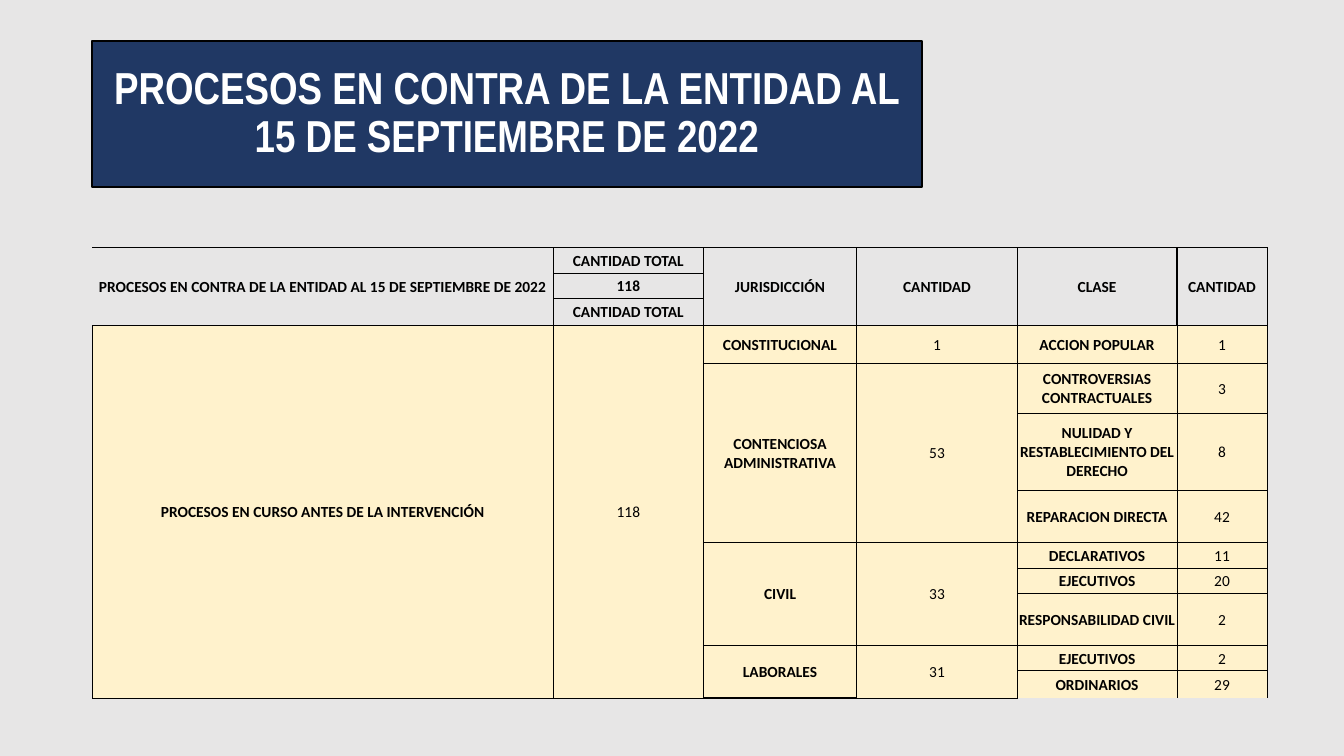
from dataclasses import dataclass

from lxml.etree import SubElement
from pptx import Presentation
from pptx.dml.color import RGBColor
from pptx.enum.shapes import MSO_SHAPE
from pptx.enum.text import MSO_ANCHOR, PP_ALIGN
from pptx.oxml import parse_xml
from pptx.oxml.ns import nsdecls, qn
from pptx.slide import Slide
from pptx.table import Table, _Cell
from pptx.text.text import TextFrame
from pptx.util import Emu, Pt

BACKGROUND = RGBColor(0xE7, 0xE6, 0xE6)
NAVY = RGBColor(0x20, 0x38, 0x64)
CREAM = RGBColor(0xFF, 0xF2, 0xCC)
BLACK = RGBColor(0, 0, 0)
WHITE = RGBColor(0xFF, 0xFF, 0xFF)

TITLE = "PROCESOS EN CONTRA DE LA ENTIDAD AL 15 DE SEPTIEMBRE DE 2022"
COLUMNS = (439, 143, 146, 153, 152, 86)
ROWS = (24, 24, 26, 36, 48, 73, 50, 24, 24, 50, 24, 26)
HEADER_ROWS = 3
SECTION_STARTS = (0, 3, 4, 7, 10)
HEADER_VERTICALS = (0, 0.5, 1, 1, 1, 1, 1)
BODY_VERTICALS = (0.5, 0.5, 1, 1, 0.5, 0.5, 1)
BOTTOM_EDGE = (0.5, 0.5, 1, 0.5, 0, 0)


@dataclass(frozen=True)
class Entry:
    """A table cell, which may span several rows."""
    row: int
    col: int
    text: str
    span: int = 1


@dataclass(frozen=True)
class Jurisdiction:
    """A jurisdiction with its total and its classes of process."""
    name: str
    total: int
    classes: tuple[tuple[str, int], ...]


JURISDICTIONS = (
    Jurisdiction("CONSTITUCIONAL", 1, (("ACCION POPULAR", 1),)),
    Jurisdiction("CONTENCIOSA ADMINISTRATIVA", 53, (
        ("CONTROVERSIAS CONTRACTUALES", 3),
        ("NULIDAD Y RESTABLECIMIENTO DEL DERECHO", 8),
        ("REPARACION DIRECTA", 42))),
    Jurisdiction("CIVIL", 33, (
        ("DECLARATIVOS", 11), ("EJECUTIVOS", 20), ("RESPONSABILIDAD CIVIL", 2))),
    Jurisdiction("LABORALES", 31, (("EJECUTIVOS", 2), ("ORDINARIOS", 29))),
)


def px(n: int) -> Emu:
    """Convert pixels to EMU."""
    return Emu(n * 9525)


def table_entries() -> list[Entry]:
    """List the header cells and the cells of every jurisdiction."""
    entries = [Entry(0, 0, TITLE, HEADER_ROWS)]
    for row, text in enumerate(("CANTIDAD TOTAL", "118", "CANTIDAD TOTAL")):
        entries.append(Entry(row, 1, text))
    for col, text in enumerate(("JURISDICCIÓN", "CANTIDAD", "CLASE", "CANTIDAD"), 2):
        entries.append(Entry(0, col, text, HEADER_ROWS))
    body_rows = len(ROWS) - HEADER_ROWS
    entries.append(Entry(HEADER_ROWS, 0, "PROCESOS EN CURSO ANTES DE LA INTERVENCIÓN", body_rows))
    entries.append(Entry(HEADER_ROWS, 1, "118", body_rows))
    row = HEADER_ROWS
    for j in JURISDICTIONS:
        entries.append(Entry(row, 2, j.name, len(j.classes)))
        entries.append(Entry(row, 3, str(j.total), len(j.classes)))
        for name, count in j.classes:
            entries.append(Entry(row, 4, name))
            entries.append(Entry(row, 5, str(count)))
            row += 1
    return entries


def horizontal_width(edge: int, col: int) -> float:
    """Return the width in points of a horizontal rule."""
    if edge == len(ROWS):
        return BOTTOM_EDGE[col]
    if edge == HEADER_ROWS and col < 2:
        return 0.5
    return 1 if edge in SECTION_STARTS else 0.5


def set_borders(cell: _Cell, widths: dict[str, float]) -> None:
    """Put the four borders before the fill of a cell."""
    tc_pr = cell._tc.get_or_add_tcPr()
    for i, (side, width) in enumerate(widths.items()):
        ln = parse_xml(f'<a:ln{side} {nsdecls("a")} w="{Pt(width)}"/>')
        if width:
            fill = SubElement(ln, qn("a:solidFill"))
            SubElement(fill, qn("a:srgbClr"), val=str(BLACK))
        else:
            SubElement(ln, qn("a:noFill"))
        tc_pr.insert(i, ln)


def set_text(tf: TextFrame, text: str, font: str, size: int, color: RGBColor, bold: bool) -> None:
    """Write one centred paragraph."""
    p = tf.paragraphs[0]
    if text:
        p.add_run().text = text
    p.alignment = PP_ALIGN.CENTER
    p.font.name, p.font.size, p.font.bold = font, Pt(size), bold
    p.font.color.rgb = color


def draw_entry(table: Table, entry: Entry) -> None:
    """Fill, rule and label the cells that an entry covers."""
    end = entry.row + entry.span
    header = entry.row < HEADER_ROWS
    verticals = HEADER_VERTICALS if header else BODY_VERTICALS
    widths = {
        "L": verticals[entry.col],
        "R": verticals[entry.col + 1],
        "T": horizontal_width(entry.row, entry.col),
        "B": horizontal_width(end, entry.col),
    }
    for row in range(entry.row, end):
        cell = table.cell(row, entry.col)
        cell.vertical_anchor = MSO_ANCHOR.MIDDLE
        cell.margin_left = cell.margin_right = cell.margin_top = px(1)
        cell.margin_bottom = 0
        if header:
            cell.fill.background()
        else:
            cell.fill.solid()
            cell.fill.fore_color.rgb = CREAM
        set_borders(cell, widths)
        text = entry.text if row == entry.row else ""
        set_text(cell.text_frame, text, "Calibri", 11, BLACK, header or not entry.text.isdigit())
    if entry.span > 1:
        table.cell(entry.row, entry.col).merge(table.cell(end - 1, entry.col))


def draw_title(s: Slide) -> None:
    """Draw the title box."""
    sp = s.shapes.add_shape(MSO_SHAPE.RECTANGLE, px(88), px(39), px(790), px(139))
    sp.shadow.inherit = False
    sp.fill.solid()
    sp.fill.fore_color.rgb = NAVY
    sp.line.color.rgb = BLACK
    sp.line.width = Pt(1.5)
    tf = sp.text_frame
    tf.word_wrap = True
    tf.vertical_anchor = MSO_ANCHOR.MIDDLE
    set_text(tf, TITLE, "Arial Narrow", 32, WHITE, True)
    tf.paragraphs[0].line_spacing = 0.9


def draw_table(s: Slide) -> None:
    """Draw the table of processes."""
    table = s.shapes.add_table(len(ROWS), len(COLUMNS), px(88), px(236),
                               px(sum(COLUMNS)), px(sum(ROWS))).table
    table.first_row = table.horz_banding = False
    for column, width in zip(table.columns, COLUMNS):
        column.width = px(width)
    for row, height in zip(table.rows, ROWS):
        row.height = px(height)
    for entry in table_entries():
        draw_entry(table, entry)


def main() -> None:
    """Build and save the slide."""
    prs = Presentation()
    prs.slide_width, prs.slide_height = px(1280), px(720)
    s = prs.slides.add_slide(prs.slide_layouts[6])
    s.background.fill.solid()
    s.background.fill.fore_color.rgb = BACKGROUND
    draw_title(s)
    draw_table(s)
    prs.save("out.pptx")


if __name__ == "__main__":
    main()
